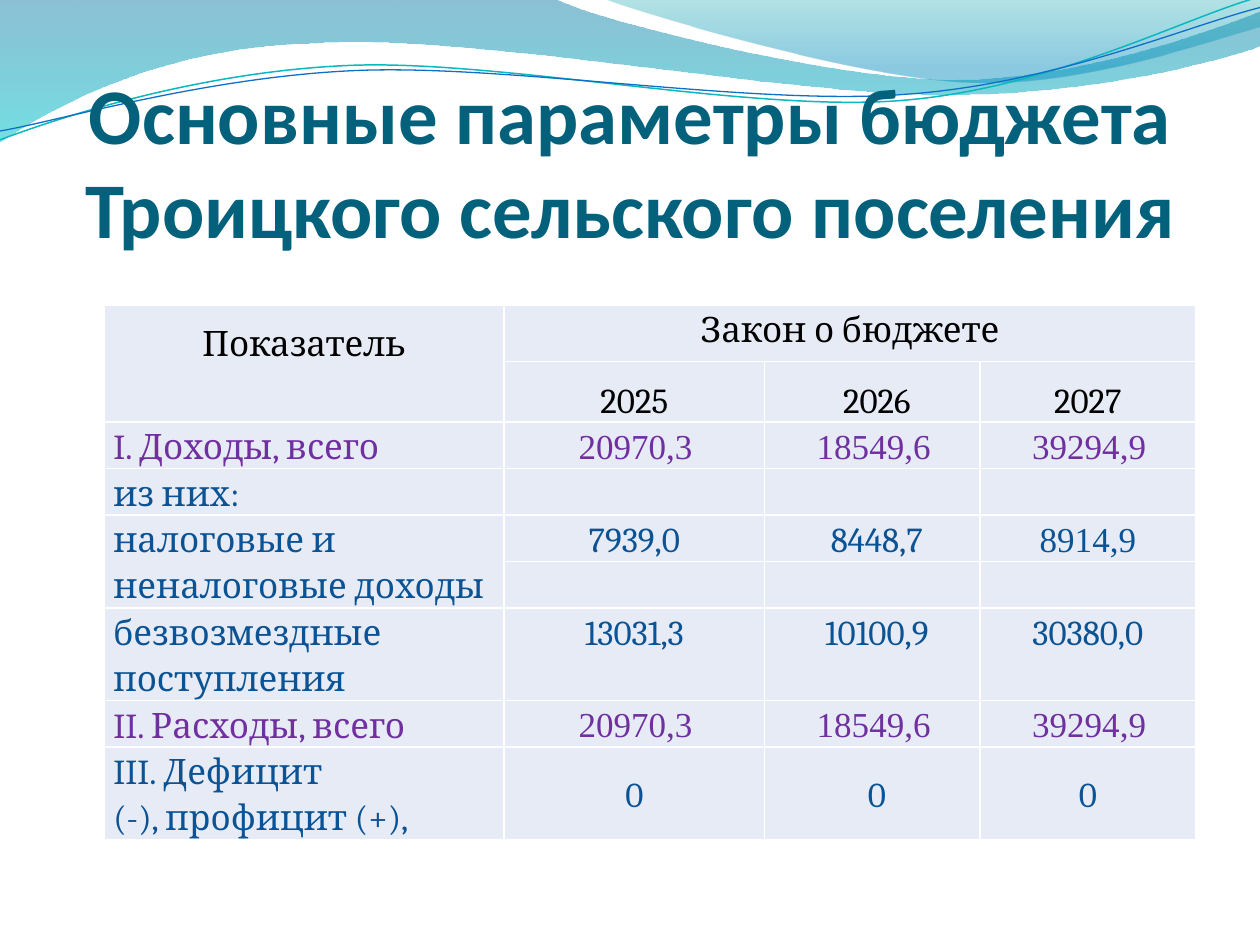
"""Build the slide with the main budget parameters of the Troitskoye settlement."""
from dataclasses import dataclass
from typing import Optional

import pptx
import pptx.dml.color
import pptx.enum.text
import pptx.oxml
import pptx.oxml.ns
import pptx.util
from pptx.dml.color import RGBColor
from pptx.util import Inches, Pt

WHITE = RGBColor(0xFF, 0xFF, 0xFF)
BLACK = RGBColor(0x00, 0x00, 0x00)
CELL_FILL = RGBColor(0xE7, 0xEB, 0xF5)
PURPLE = RGBColor(0x70, 0x30, 0xA0)
BLUE = RGBColor(0x0B, 0x53, 0x94)
TITLE_COLOR = RGBColor(0x04, 0x61, 0x7B)
TEAL_LINE = RGBColor(0x0A, 0xB8, 0xBF)
BLUE_LINE = RGBColor(0x0F, 0x6F, 0xC6)
BAND_TOP = RGBColor(0x00, 0x74, 0xA1)
BAND_BOTTOM = RGBColor(0x00, 0xC6, 0xCF)
CREST_TOP = RGBColor(0x00, 0xA1, 0xA9)
CREST_BOTTOM = RGBColor(0x00, 0x8B, 0xBF)
SERIF, TIMES = "Cambria", "Times New Roman"
CENTER = pptx.enum.text.PP_ALIGN.CENTER
LEFT = pptx.enum.text.PP_ALIGN.LEFT
TOP = pptx.enum.text.MSO_ANCHOR.TOP
MIDDLE = pptx.enum.text.MSO_ANCHOR.MIDDLE


@dataclass
class Stop:
    position: float
    color: RGBColor
    opacity: int


@dataclass
class Wave:
    start: tuple
    segments: list
    stops: tuple = ()
    line: Optional[RGBColor] = None
    width: float = 0


@dataclass
class CellText:
    text: str
    color: RGBColor = BLUE
    font: str = SERIF
    align: int = CENTER
    anchor: int = TOP
    spacing: float = 1.15
    indent: float = 0


@dataclass
class Row:
    label: str
    values: tuple = ()
    color: RGBColor = BLUE
    fonts: tuple = (SERIF,) * 3
    indents: tuple = (-0.07, 0.07, -0.07)
    label_anchor: int = TOP
    value_anchor: int = TOP


WAVES = [
    Wave((0, 0), [
        ((4.4, -0.01),), ((4.76, 0.17), (6.64, 0.63), (7.58, 0.63)),
        ((8.53, 0.63), (9.58, 0.26), (10, 0.09)), ((10.01, 0.36),),
        ((9.83, 0.44), (8.7, 0.76), (7.46, 0.75)),
        ((6.22, 0.75), (3.82, 0.28), (2.57, 0.34)),
        ((1.29, 0.36), (0.46, 0.83), (-0.01, 1.13))],
        (Stop(0, BAND_TOP, 45), Stop(1, BAND_BOTTOM, 55))),
    Wave((4.79, -0.01), [
        ((5.09, 0.11), (6.82, 0.62), (7.69, 0.65)),
        ((8.56, 0.69), (9.61, 0.32), (10, 0.21)), ((10, 0),)],
        (Stop(0, CREST_TOP, 30), Stop(0.8, CREST_BOTTOM, 45))),
    Wave((0, 1.11), [
        ((0.48, 0.93), (1.58, 0.57), (2.77, 0.52)),
        ((3.95, 0.47), (5.93, 0.89), (7.13, 0.8)),
        ((8.33, 0.71), (9.38, 0.15), (9.98, -0.02))], line=TEAL_LINE, width=0.85),
    Wave((0, 1.04), [
        ((0.47, 0.96), (1.64, 0.61), (2.83, 0.56)),
        ((4.03, 0.51), (5.97, 0.84), (7.17, 0.75)),
        ((8.36, 0.67), (9.41, 0.21), (10, 0.06))], line=BLUE_LINE, width=0.75),
]
TOTALS = dict(values=("20970,3", "18549,6", "39294,9"), color=PURPLE,
              fonts=(TIMES,) * 3, indents=(0.02,) * 3, label_anchor=MIDDLE)
ROWS = [
    Row("I. Доходы, всего", **TOTALS),
    Row("из них:", label_anchor=MIDDLE),
    Row("налоговые и неналоговые доходы", ("7939,0", "8448,7", "8914,9"),
        fonts=(SERIF, SERIF, TIMES)),
    Row(""),
    Row("безвозмездные поступления", ("13031,3", "10100,9", "30380,0")),
    Row("II. Расходы, всего", **TOTALS),
    Row("III. Дефицит\n(-), профицит (+),", ("0",) * 3,
        indents=(0, 0.07, 0), value_anchor=MIDDLE),
]
COL_WIDTHS = (3.17, 2.07, 1.71, 1.71)
ROW_HEIGHTS = (0.45, 0.47, 0.36, 0.36, 0.36, 0.37, 0.73, 0.36, 0.73)


def bend_segments(sp: pptx.shapes.autoshape.Shape, segments: list) -> None:
    lines = list(sp.element.iter(pptx.oxml.ns.qn("a:lnTo")))
    for line, segment in zip(lines, segments):
        if len(segment) == 3:
            points = "".join(f'<a:pt x="{Inches(x) - sp.left}" y="{Inches(y) - sp.top}"/>'
                             for x, y in segment)
            line.getparent().replace(line, pptx.oxml.parse_xml(
                f'<a:cubicBezTo {pptx.oxml.ns.nsdecls("a")}>{points}</a:cubicBezTo>'))


def add_wave(s: pptx.slide.Slide, wave: Wave) -> None:
    x, y = map(Inches, wave.start)
    builder = s.shapes.build_freeform(x, y, scale=1.0)
    ends = [tuple(map(Inches, segment[-1])) for segment in wave.segments]
    builder.add_line_segments(ends, close=bool(wave.stops))
    sp = builder.convert_to_shape()
    bend_segments(sp, wave.segments)
    sp.shadow.inherit = False
    if wave.line is not None:
        sp.fill.background()
        sp.line.color.rgb = wave.line
        sp.line.width = Pt(wave.width)
        return
    sp.line.fill.background()
    sp.fill.gradient()
    sp.fill.gradient_angle = 270
    for stop, gs in zip(wave.stops, sp.fill.gradient_stops):
        gs.position = stop.position
        gs.color.rgb = stop.color
    colors = list(sp.element.iter(pptx.oxml.ns.qn("a:srgbClr")))
    for stop, color in zip(wave.stops, colors):
        color.append(pptx.oxml.parse_xml(
            f'<a:alpha {pptx.oxml.ns.nsdecls("a")} val="{stop.opacity * 1000}"/>'))


def format_cell(cell: pptx.table._Cell) -> None:
    cell.margin_left = cell.margin_right = Inches(0.07)
    cell.margin_top = cell.margin_bottom = 0
    cell.fill.solid()
    cell.fill.fore_color.rgb = CELL_FILL
    for i, side in enumerate("LRTB"):
        cell._tc.get_or_add_tcPr().insert(i, pptx.oxml.parse_xml(
            f'<a:ln{side} {pptx.oxml.ns.nsdecls("a")} w="12700"><a:solidFill>'
            f'<a:srgbClr val="{WHITE}"/></a:solidFill></a:ln{side}>'))


def write_cell(cell: pptx.table._Cell, content: CellText) -> None:
    cell.text = content.text
    cell.vertical_anchor = content.anchor
    for p in cell.text_frame.paragraphs:
        p.alignment = content.align
        p.line_spacing = content.spacing
        p.font.size = Pt(20)
        p.font.name = content.font
        p.font.color.rgb = content.color
        p._p.get_or_add_pPr().set("indent", str(Inches(content.indent)))


def add_budget_table(s: pptx.slide.Slide) -> None:
    table = s.shapes.add_table(
        len(ROW_HEIGHTS), len(COL_WIDTHS), Inches(0.83), Inches(2.42),
        Inches(sum(COL_WIDTHS)), Inches(sum(ROW_HEIGHTS))).table
    table.first_row = table.horz_banding = False
    for column, width in zip(table.columns, COL_WIDTHS):
        column.width = Inches(width)
    for row, height in zip(table.rows, ROW_HEIGHTS):
        row.height = Inches(height)
    for cell in table.iter_cells():
        format_cell(cell)
    for first, last in (((0, 0), (1, 0)), ((0, 1), (0, 3)), ((4, 0), (5, 0))):
        table.cell(*first).merge(table.cell(*last))
    write_cell(table.cell(0, 0), CellText("Показатель", BLACK, spacing=1.5, indent=-0.07))
    write_cell(table.cell(0, 1), CellText("Закон о бюджете", BLACK))
    for c, (year, indent) in enumerate(zip(("2025", "2026", "2027"), (0, 0.07, 0)), 1):
        write_cell(table.cell(1, c), CellText(year, BLACK, spacing=1.5, indent=indent))
    for r, row in enumerate(ROWS, 2):
        if row.label:
            write_cell(table.cell(r, 0), CellText(
                row.label, row.color, align=LEFT, anchor=row.label_anchor))
        for c, (value, font, indent) in enumerate(zip(row.values, row.fonts, row.indents), 1):
            write_cell(table.cell(r, c), CellText(
                value, row.color, font, anchor=row.value_anchor, indent=indent))


def format_title(s: pptx.slide.Slide) -> None:
    sp = s.shapes.title
    s.shapes.element.append(sp.element)
    sp.left, sp.top, sp.width, sp.height = map(Inches, (0.5, 0.77, 9, 1.25))
    tf = sp.text_frame
    tf.text = "Основные параметры бюджета Троицкого сельского поселения"
    tf.word_wrap = True
    tf.auto_size = pptx.enum.text.MSO_AUTO_SIZE.NONE
    tf.vertical_anchor = pptx.enum.text.MSO_ANCHOR.BOTTOM
    tf.margin_left = tf.margin_right = tf.margin_bottom = 0
    tf.margin_top = Inches(0.05)
    p = tf.paragraphs[0]
    p.alignment = CENTER
    p.font.size, p.font.name, p.font.bold = Pt(45), "Calibri", True
    p.font.color.rgb = TITLE_COLOR


def main() -> None:
    prs = pptx.Presentation()
    prs.slide_width, prs.slide_height = Inches(10), Inches(7.5)
    s = prs.slides.add_slide(prs.slide_layouts[5])
    for wave in WAVES:
        add_wave(s, wave)
    format_title(s)
    add_budget_table(s)
    prs.save("out.pptx")


if __name__ == "__main__":
    main()
